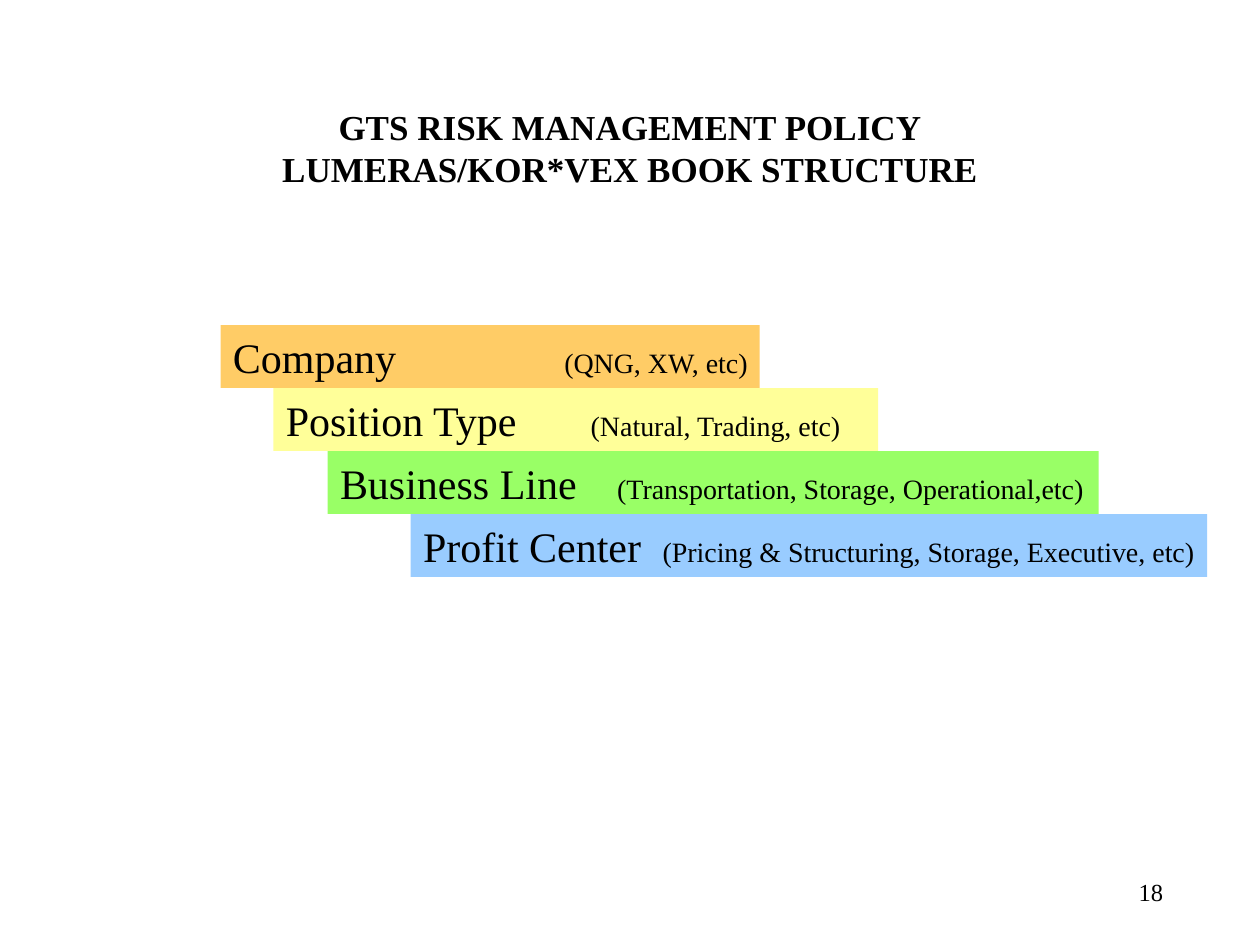
from dataclasses import dataclass

from lxml import etree
from pptx import Presentation
from pptx import util as u
from pptx.dml.color import RGBColor
from pptx.enum import shapes, text
from pptx.oxml.ns import qn


@dataclass(frozen=True)
class Theme:
    """Hold the colours, font and type sizes of the slide."""
    font: str = "Times New Roman"
    ink: str = "000000"
    company: str = "FFCC66"
    position: str = "FFFF99"
    business: str = "99FF66"
    profit: str = "99CCFF"
    title: int = 20
    level: int = 24
    example: int = 16
    number: int = 14


THEME = Theme()
LEVEL_TOP = 2.58
LEVEL_HEIGHT = 0.5


def add_tab_stop(paragraph, position):
    """Add one left tab stop to a paragraph."""
    properties = paragraph._p.get_or_add_pPr()
    tabs = etree.SubElement(properties, qn("a:tabLst"))
    etree.SubElement(tabs, qn("a:tab"), pos=str(u.Inches(position)), algn="l")


def write_text(shape, parts, align=text.PP_ALIGN.LEFT, anchor=text.MSO_ANCHOR.MIDDLE,
               bold=False, tab=None, right_inset=0.1):
    """Write (text, size) parts as one paragraph, with newlines as line breaks."""
    frame = shape.text_frame
    frame.word_wrap = True
    frame.auto_size = text.MSO_AUTO_SIZE.NONE
    frame.vertical_anchor = anchor
    frame.margin_left, frame.margin_right = u.Inches(0.1), u.Inches(right_inset)
    frame.margin_top = frame.margin_bottom = u.Inches(0.05)
    paragraph = frame.paragraphs[0]
    paragraph.alignment = align
    if tab is not None:
        add_tab_stop(paragraph, tab)
    for content, size in parts:
        for index, line in enumerate(content.split("\n")):
            if index:
                paragraph.add_line_break()
            run = paragraph.add_run()
            run.text = line
            run.font.name = THEME.font
            run.font.size = u.Pt(size)
            run.font.bold = bold
            run.font.color.rgb = RGBColor.from_string(THEME.ink)


def add_title(slide, content):
    """Place and fill the title placeholder."""
    title = slide.shapes.title
    title.left, title.top = u.Inches(0.75), u.Inches(0.67)
    title.width, title.height = u.Inches(8.5), u.Inches(1)
    write_text(title, [(content, THEME.title)], align=text.PP_ALIGN.CENTER, bold=True)


def add_level(slide, row, name, examples, left, width, tab, color):
    """Add one coloured bar of the book structure."""
    bar = slide.shapes.add_shape(
        shapes.MSO_SHAPE.RECTANGLE, u.Inches(left),
        u.Inches(LEVEL_TOP + row * LEVEL_HEIGHT), u.Inches(width), u.Inches(LEVEL_HEIGHT))
    bar.shadow.inherit = False
    bar.fill.solid()
    bar.fill.fore_color.rgb = RGBColor.from_string(color)
    bar.line.fill.background()
    write_text(bar, [(name + "\t", THEME.level), (examples, THEME.example)],
               anchor=text.MSO_ANCHOR.TOP, tab=tab, right_inset=0)


def add_page_number(slide, number):
    """Add the page number at the lower right."""
    box = slide.shapes.add_textbox(
        u.Inches(7.25), u.Inches(6.83), u.Inches(2.08), u.Inches(0.5))
    write_text(box, [(number, THEME.number)], align=text.PP_ALIGN.RIGHT)


def main():
    """Build and save the slide."""
    presentation = Presentation()
    presentation.slide_width, presentation.slide_height = u.Inches(10), u.Inches(7.5)
    slide = presentation.slides.add_slide(presentation.slide_layouts[5])
    add_title(slide, "GTS RISK MANAGEMENT POLICY\nLUMERAS/KOR*VEX BOOK STRUCTURE")
    levels = [
        ("Company", "(QNG, XW, etc)", 1.75, 4.28, 2.63, THEME.company),
        ("Position Type", "(Natural, Trading, etc)", 2.17, 4.8, 2.42, THEME.position),
        ("Business Line", "(Transportation, Storage, Operational,etc)",
         2.6, 6.12, 2.2, THEME.business),
        ("Profit Center", "(Pricing & Structuring, Storage, Executive, etc)",
         3.26, 6.32, 1.9, THEME.profit),
    ]
    for row, level in enumerate(levels):
        add_level(slide, row, *level)
    add_page_number(slide, "18")
    presentation.save("out.pptx")


if __name__ == "__main__":
    main()
